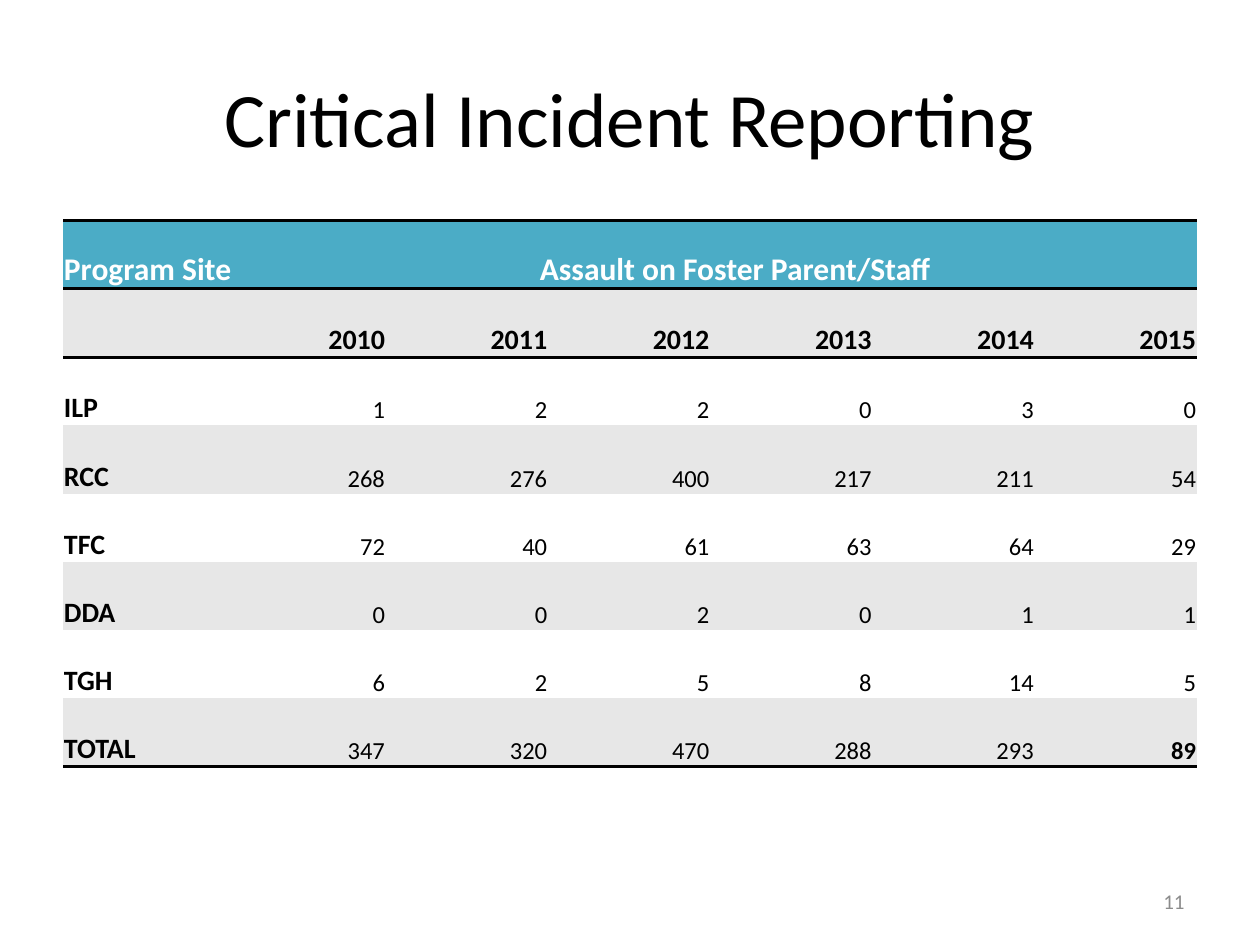
from lxml import etree
from pptx import Presentation
from pptx.dml.color import RGBColor
from pptx.enum.text import MSO_ANCHOR, PP_ALIGN
from pptx.oxml.ns import qn
from pptx.util import Cm, Pt

LEFT, CENTER, RIGHT = PP_ALIGN.LEFT, PP_ALIGN.CENTER, PP_ALIGN.RIGHT
MIDDLE, BOTTOM = MSO_ANCHOR.MIDDLE, MSO_ANCHOR.BOTTOM

FONT = "Calibri"
BLACK, WHITE, TEAL, BAND, GREY = "000000", "FFFFFF", "4BACC6", "E7E7E7", "8C8C8C"
NO_STYLE_NO_GRID = "{2D5ABB26-0587-4C30-8999-92F81FD0307C}"

SITE_HEADING = "Program Site"
INCIDENT_HEADING = "Assault on Foster Parent/Staff"
YEARS = ["", 2010, 2011, 2012, 2013, 2014, 2015]
INCIDENTS = [
    ["ILP", 1, 2, 2, 0, 3, 0],
    ["RCC", 268, 276, 400, 217, 211, 54],
    ["TFC", 72, 40, 61, 63, 64, 29],
    ["DDA", 0, 0, 2, 0, 1, 1],
    ["TGH", 6, 2, 5, 8, 14, 5],
    ["TOTAL", 347, 320, 470, 288, 293, 89],
]
COLUMN_WIDTHS = [4.24, 2.27] + [3.27] * 5


def color(hex_value):
    return RGBColor.from_string(hex_value)


def write(frame, text, size, align, hex_color=BLACK, bold=False):
    paragraph = frame.paragraphs[0]
    paragraph.alignment = align
    run = paragraph.add_run()
    run.text = text
    run.font.name = FONT
    run.font.size = Pt(size)
    run.font.bold = bold
    run.font.color.rgb = color(hex_color)


def add_label(slide, box, text, size, align, hex_color):
    label = slide.shapes.add_textbox(*(Cm(length) for length in box))
    frame = label.text_frame
    frame.word_wrap = True
    frame.vertical_anchor = MIDDLE
    write(frame, text, size, align, hex_color)


def add_rules(cell, sides):
    """Draw 2 pt black rules; sides run in schema order, lnT before lnB."""
    properties = cell._tc.get_or_add_tcPr()
    for index, side in enumerate(sides):
        line = etree.Element(qn(f"a:{side}"), w=str(Pt(2)))
        fill = etree.SubElement(line, qn("a:solidFill"))
        etree.SubElement(fill, qn("a:srgbClr"), val=BLACK)
        properties.insert(index, line)


def fill_cell(cell, text, size, align, hex_color=BLACK, bold=False):
    cell.margin_left = cell.margin_right = cell.margin_top = Cm(0.02)
    cell.margin_bottom = 0
    cell.vertical_anchor = BOTTOM
    if text:
        write(cell.text_frame, text, size, align, hex_color, bold)


def add_incident_table(slide, box):
    left, top, width, height = box
    body = [YEARS] + INCIDENTS
    row_count = len(body) + 1
    table = slide.shapes.add_table(row_count, len(YEARS), Cm(left), Cm(top),
                                   Cm(width), Cm(height)).table
    table._tbl.tblPr.find(qn("a:tableStyleId")).text = NO_STYLE_NO_GRID
    for column, column_width in zip(table.columns, COLUMN_WIDTHS):
        column.width = Cm(column_width)

    # Row heights, bands and rules
    for r, row in enumerate(table.rows):
        row.height = Cm(height / row_count)
        background = TEAL if r == 0 else BAND if r % 2 else WHITE
        for cell in row.cells:
            cell.fill.solid()
            cell.fill.fore_color.rgb = color(background)
            if r == 0:
                add_rules(cell, ["lnT", "lnB"])
            elif r == 1:
                add_rules(cell, ["lnT"])
            elif r == row_count - 1:
                add_rules(cell, ["lnB"])

    # Heading row
    incident_cell = table.cell(0, 1)
    incident_cell.merge(table.cell(0, len(YEARS) - 1))
    fill_cell(table.cell(0, 0), SITE_HEADING, 18, LEFT, WHITE, True)
    fill_cell(incident_cell, INCIDENT_HEADING, 18, CENTER, WHITE, True)

    # Years, sites and counts
    for r, values in enumerate(body, start=1):
        for c, value in enumerate(values):
            is_heading = r == 1 or c == 0
            is_grand_total = r == row_count - 1 and c == len(YEARS) - 1
            fill_cell(table.cell(r, c), str(value), 16 if is_heading else 14,
                      RIGHT if c else LEFT, bold=is_heading or is_grand_total)


def main():
    presentation = Presentation()
    presentation.slide_width, presentation.slide_height = Cm(25.4), Cm(19.05)
    slide = presentation.slides.add_slide(presentation.slide_layouts[6])

    # Title
    add_label(slide, (1.27, 0.76, 22.86, 3.18), "Critical Incident Reporting",
              44, CENTER, BLACK)
    # Incidents by site and year
    add_incident_table(slide, (1.27, 4.45, 22.86, 11))
    # Page number
    add_label(slide, (18.21, 17.65, 5.92, 1.02), "11", 12, RIGHT, GREY)

    presentation.save("out.pptx")


if __name__ == "__main__":
    main()
